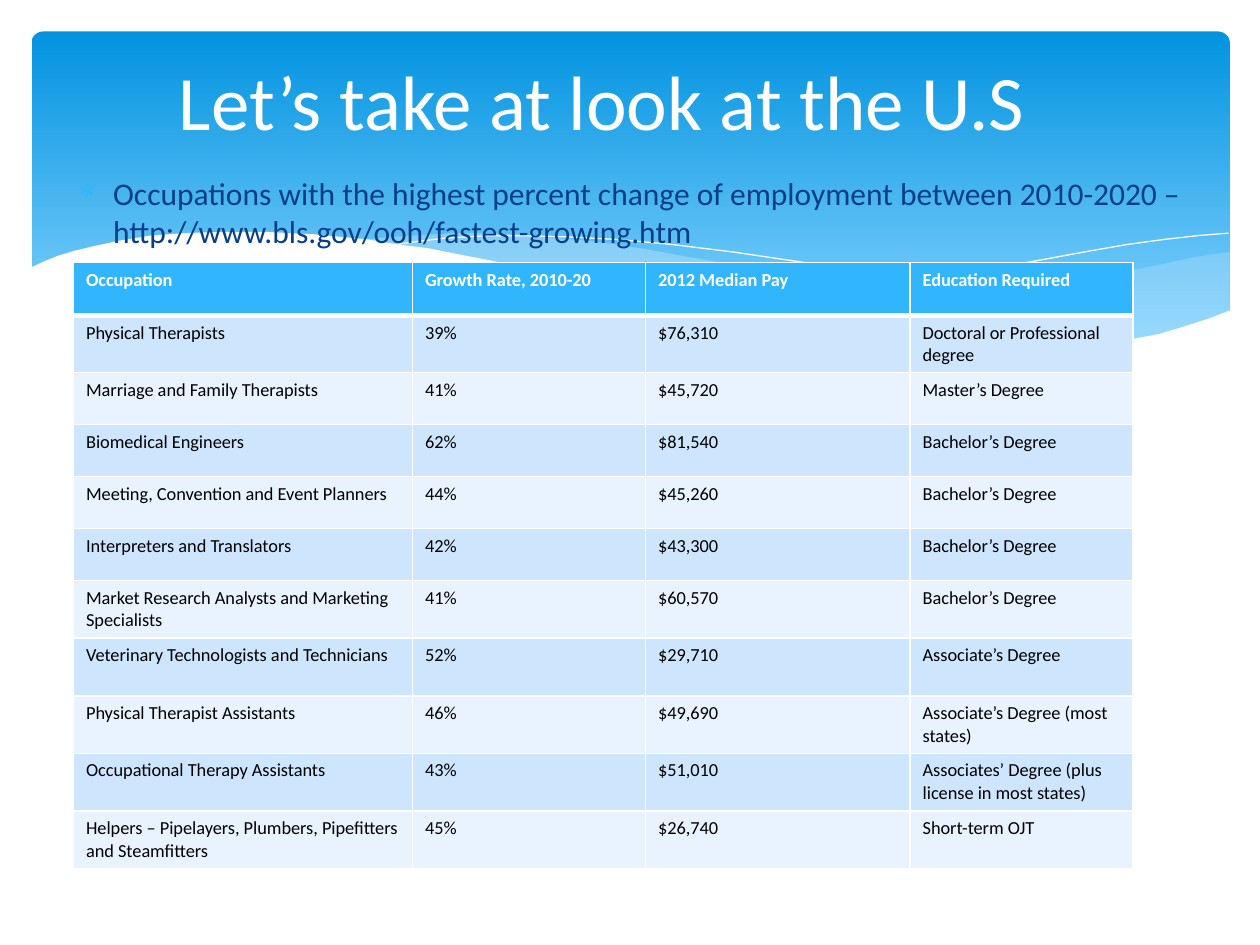
from lxml.etree import SubElement
from pptx import Presentation
from pptx.dml.color import RGBColor
from pptx.enum.shapes import MSO_SHAPE
from pptx.enum.text import MSO_ANCHOR, PP_ALIGN
from pptx.oxml.ns import qn
from pptx.util import Pt

WHITE, SKY, PALE, NAVY = "FFFFFF", "31B6FD", "C6E7FC", "073E87"
BANDS = ("E8F3FF", "CEE5FE")
UNIT = 0.72

RIGHT = [
    (975, 200), (948, 204), (921, 210), (891, 216), (861, 223), (832, 230), (805, 237),
    (779, 242), (729, 253), (683, 262), (661, 265), (691, 269), (719, 272), (745, 275),
    (769, 277), (803, 278), (835, 277), (863, 275), (889, 272), (913, 267), (935, 262),
    (949, 257), (963, 252), (976, 247), (976, 200)]
MIDDLE = [
    (893, 273), (866, 269), (837, 265), (807, 260), (775, 254), (741, 247), (706, 240),
    (668, 231), (629, 222), (598, 214), (569, 208), (541, 203), (514, 198), (489, 194),
    (465, 191), (442, 189), (420, 187), (380, 185), (361, 185), (328, 187), (299, 189),
    (286, 191), (323, 196), (362, 203), (404, 211), (449, 222), (491, 232), (530, 240),
    (566, 248), (601, 255), (634, 261), (665, 266), (695, 270), (722, 274), (748, 276),
    (773, 277), (796, 278), (828, 278), (857, 277), (876, 275)]
FALL = [
    (309, 195), (328, 192), (353, 189), (387, 187), (416, 187), (450, 188), (489, 190),
    (533, 194), (582, 200), (636, 208), (695, 219), (727, 226), (760, 233), (795, 241),
    (831, 251), (869, 261), (907, 272)]
RISE = [
    (613, 257), (653, 246), (695, 235), (748, 223), (806, 210), (866, 199), (895, 194),
    (924, 190), (951, 187), (975, 185)]
FRONT = [
    (977, 246), (959, 253), (940, 259), (920, 265), (899, 269), (875, 273), (850, 275),
    (823, 277), (793, 276), (761, 275), (726, 272), (688, 268), (648, 262), (603, 254),
    (555, 245), (503, 233), (447, 220), (418, 213), (391, 207), (365, 202), (340, 197),
    (316, 194), (292, 190), (271, 188), (250, 186), (230, 185), (211, 184), (177, 184),
    (146, 185), (119, 187), (95, 191), (76, 195), (59, 199), (46, 203), (36, 207),
    (23, 213), (23, 329), (977, 329)]

COLS = (193.7, 133.2, 151.2, 127.4)
TALL = {0: 30.2, 6: 33.1, 7: 33.1, 9: 33.1, 10: 33.1}
ROWS = [
    ("Occupation", "Growth Rate, 2010-20", "2012 Median Pay", "Education Required"),
    ("Physical Therapists", "39%", "$76,310", "Doctoral or Professional degree"),
    ("Marriage and Family Therapists", "41%", "$45,720", "Master’s Degree"),
    ("Biomedical Engineers", "62%", "$81,540", "Bachelor’s Degree"),
    ("Meeting, Convention and Event Planners", "44%", "$45,260", "Bachelor’s Degree"),
    ("Interpreters and Translators", "42%", "$43,300", "Bachelor’s Degree"),
    ("Market Research Analysts and Marketing Specialists", "41%", "$60,570",
     "Bachelor’s Degree"),
    ("Veterinary Technologists and Technicians", "52%", "$29,710", "Associate’s Degree"),
    ("Physical Therapist Assistants", "46%", "$49,690", "Associate’s Degree (most states)"),
    ("Occupational Therapy Assistants", "43%", "$51,010",
     "Associates’ Degree (plus license in most states)"),
    ("Helpers – Pipelayers, Plumbers, Pipefitters and Steamfitters", "45%", "$26,740",
     "Short-term OJT"),
]


def tint(code):
    return RGBColor.from_string(code)


def apply(item, form):
    for name, value in form.items():
        setattr(item, name, value)


class Deck:
    """Hold the slide and its style, and draw each kind of element."""

    def __init__(self, font):
        self.font = font
        self.deck = Presentation()
        apply(self.deck, {"slide_width": Pt(720), "slide_height": Pt(540)})
        self.slide = self.deck.slides.add_slide(self.deck.slide_layouts[5])
        self.shapes = self.slide.shapes

    def label(self, para, text, size, color, bold=False):
        run = para.add_run()
        run.text = text
        apply(run.font, {"name": self.font, "size": Pt(size), "bold": bold})
        run.font.color.rgb = tint(color)

    def panel(self, box, top, base):
        shape = self.shapes.add_shape(MSO_SHAPE.ROUNDED_RECTANGLE, *map(Pt, box))
        shape.adjustments[0] = 0.034
        shape.shadow.inherit = False
        shape.line.fill.background()
        shape.fill.gradient()
        shape.fill.gradient_angle = 270
        for stop, color, place in zip(shape.fill.gradient_stops, (top, base), (0, 0.9)):
            stop.color.rgb = tint(color)
            stop.position = place

    def trace(self, points, close):
        pen = self.shapes.build_freeform(*points[0], scale=Pt(UNIT))
        pen.add_line_segments(points[1:], close=close)
        shape = pen.convert_to_shape()
        shape.shadow.inherit = False
        return shape

    def wave(self, points, color, alpha=100):
        shape = self.trace(points, True)
        shape.line.fill.background()
        shape.fill.solid()
        shape.fill.fore_color.rgb = tint(color)
        if alpha < 100:
            tone = next(shape.element.iter(qn("a:srgbClr")))
            SubElement(tone, qn("a:alpha"), val=str(alpha * 1000))

    def curve(self, points, color):
        shape = self.trace(points, False)
        shape.fill.background()
        shape.line.color.rgb = tint(color)
        shape.line.width = Pt(0)

    def bullet(self, box, text, size, color, mark):
        frame = self.shapes.add_textbox(*map(Pt, box)).text_frame
        frame.word_wrap = True
        para = frame.paragraphs[0]
        para.space_before = Pt(size * 0.2)
        props = para._p.get_or_add_pPr()
        for name, value in {"marL": Pt(21.6), "indent": Pt(-21.6)}.items():
            props.set(name, str(value))
        SubElement(SubElement(props, qn("a:buClr")), qn("a:srgbClr"), val=mark)
        SubElement(props, qn("a:buChar"), char="∗")
        self.label(para, text, size, color)

    def title(self, box, text, size, color):
        shape = self.shapes.title
        apply(shape, dict(zip(("left", "top", "width", "height"), map(Pt, box))))
        shape.element.getparent().append(shape.element)
        apply(shape.text_frame, {"word_wrap": True, "vertical_anchor": MSO_ANCHOR.MIDDLE})
        para = shape.text_frame.paragraphs[0]
        para.alignment = PP_ALIGN.CENTER
        self.label(para, text, size, color)

    def edge(self, cell, widths):
        props = cell._tc.get_or_add_tcPr()
        for spot, (side, width) in enumerate(widths.items()):
            line = SubElement(props, qn(f"a:ln{side}"), w=str(Pt(width)))
            SubElement(SubElement(line, qn("a:solidFill")), qn("a:srgbClr"), val=WHITE)
            props.insert(spot, line)

    def table(self, left, top, rows, cols, highs):
        box = map(Pt, (left, top, sum(cols), sum(highs)))
        grid = self.shapes.add_table(len(rows), len(cols), *box).table
        for col, width in zip(grid.columns, cols):
            col.width = Pt(width)
        for i, (row, high) in enumerate(zip(rows, highs)):
            grid.rows[i].height = Pt(high)
            head = i == 0
            for j, text in enumerate(row):
                cell = grid.cell(i, j)
                cell.fill.solid()
                cell.fill.fore_color.rgb = tint(SKY if head else BANDS[i % 2])
                self.edge(cell, {"L": 1, "R": 1, "T": 3 if i == 1 else 1, "B": 3 if head else 1})
                para = cell.text_frame.paragraphs[0]
                self.label(para, text, 10.5, WHITE if head else "000000", head)


def main():
    deck = Deck("Calibri")
    deck.panel((18, 18, 684.7, 194.4), "0293E0", "83D3FE")
    deck.wave(RIGHT, PALE, 29)
    deck.wave(MIDDLE, PALE, 40)
    deck.curve(FALL, WHITE)
    deck.curve(RISE, WHITE)
    deck.wave(FRONT, WHITE)
    deck.bullet(
        (36, 95.8, 648, 437.8),
        "Occupations with the highest percent change of employment between 2010-2020 – "
        "http://www.bls.gov/ooh/fastest-growing.htm", 18, NAVY, SKY)
    deck.title((30.2, 12.2, 648, 90), "Let’s take at look at the U.S\t", 44, WHITE)
    highs = [TALL.get(i, 29.7) for i in range(len(ROWS))]
    deck.table(42, 150, ROWS, COLS, highs)
    deck.deck.save("out.pptx")


if __name__ == "__main__":
    main()
